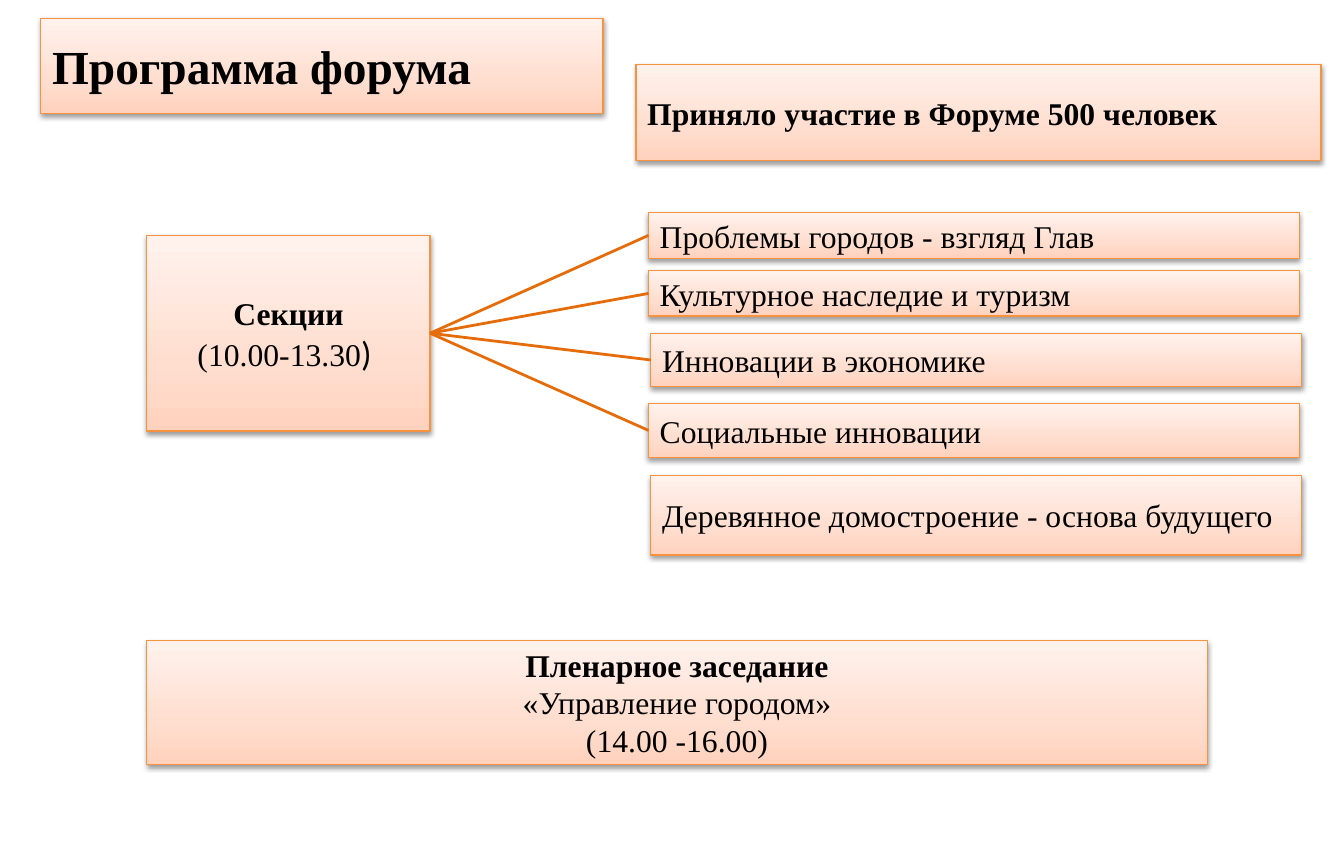
"""Build the forum programme slide."""
import copy

import pptx
import pptx.dml.color
import pptx.enum.shapes
import pptx.enum.text
import pptx.oxml
import pptx.oxml.ns
import pptx.util
from pptx.util import Inches

COLORS = {
    "bottom": "FFD2BD",
    "middle": "FFDED0",
    "top": "FFF2ED",
    "border": "F69240",
    "connector": "E46C0A",
    "text": "000000",
}
GRADIENT = [(0, "bottom"), (0.35, "middle"), (1, "top")]
SHADOW = (
    f'<a:outerShdw {pptx.oxml.ns.nsdecls("a")} blurRad="40000" dist="20000" '
    'dir="5400000" rotWithShape="0"><a:srgbClr val="000000">'
    '<a:alpha val="38000"/></a:srgbClr></a:outerShdw>'
)
LEFT = pptx.enum.text.PP_ALIGN.LEFT
CENTER = pptx.enum.text.PP_ALIGN.CENTER
SECTIONS = [
    ("Проблемы городов - взгляд Глав", 5.7, 1.87, 0.4),
    ("Культурное наследие и туризм", 5.7, 2.38, 0.4),
    ("Инновации в экономике", 5.72, 2.93, 0.47),
    ("Социальные инновации", 5.7, 3.55, 0.47),
    ("Деревянное домостроение - основа будущего", 5.72, 4.18, 0.7),
]


def rgb(name):
    """Return the named colour."""
    return pptx.dml.color.RGBColor.from_string(COLORS[name])


def add_run(paragraph, text, size=20, bold=False, font="Times New Roman"):
    """Append formatted text to a paragraph."""
    run = paragraph.add_run()
    run.text = text
    run.font.size = pptx.util.Pt(size)
    run.font.bold = bold
    run.font.name = font
    run.font.color.rgb = rgb("text")


def fill_gradient(shape):
    """Give a shape the three-stop vertical gradient."""
    shape.fill.gradient()
    shape.fill.gradient_angle = 90
    stops = shape.element.spPr.find(".//" + pptx.oxml.ns.qn("a:gsLst"))
    stops.append(copy.deepcopy(stops[0]))
    for stop, (position, color) in zip(shape.fill.gradient_stops, GRADIENT):
        stop.position = position
        stop.color.rgb = rgb(color)


def add_box(slide, left, top, width, height, lines, align=LEFT):
    """Add a shaded box; each line is a list of (text, format) runs."""
    shape = slide.shapes.add_shape(
        pptx.enum.shapes.MSO_SHAPE.RECTANGLE,
        Inches(left), Inches(top), Inches(width), Inches(height))
    fill_gradient(shape)
    shape.line.color.rgb = rgb("border")
    shape.line.width = pptx.util.Pt(0.75)
    shape.shadow.inherit = False
    effects = shape.element.spPr.find(pptx.oxml.ns.qn("a:effectLst"))
    effects.append(pptx.oxml.parse_xml(SHADOW))
    frame = shape.text_frame
    frame.word_wrap = True
    frame.vertical_anchor = pptx.enum.text.MSO_ANCHOR.MIDDLE
    for index, runs in enumerate(lines):
        paragraph = frame.add_paragraph() if index else frame.paragraphs[0]
        paragraph.alignment = align
        for text, text_format in runs:
            add_run(paragraph, text, **text_format)
    return shape


def add_link(slide, source, target):
    """Join the right side of one box to the left side of another."""
    connector = slide.shapes.add_connector(
        pptx.enum.shapes.MSO_CONNECTOR.STRAIGHT, 0, 0, 0, 0)
    connector.begin_connect(source, 3)
    connector.end_connect(target, 1)
    connector.line.color.rgb = rgb("connector")
    connector.line.width = pptx.util.Pt(1.75)
    connector.element.spPr.append(pptx.oxml.parse_xml(
        f'<a:effectLst {pptx.oxml.ns.nsdecls("a")}/>'))


def main():
    """Build and save the slide."""
    presentation = pptx.Presentation()
    presentation.slide_width = Inches(189 / 16)
    presentation.slide_height = Inches(7.5)
    slide = presentation.slides.add_slide(presentation.slide_layouts[6])
    bold = {"bold": True}

    add_box(slide, 0.36, 0.16, 4.94, 0.84,
            [[("Программа форума", {"size": 30, "bold": True})]])
    add_box(slide, 5.59, 0.57, 6.02, 0.84,
            [[("Приняло участие в Форуме 500 человек", bold)]])
    hub = add_box(slide, 1.29, 2.07, 2.49, 1.72, [
        [("Секции", bold)],
        [("(10.00-13.30", {}), (") ", {"size": 22, "font": "Calibri"})],
    ], align=CENTER)
    topics = [add_box(slide, left, top, 5.72, height, [[(text, {})]])
              for text, left, top, height in SECTIONS]
    for topic in topics[:4]:
        add_link(slide, hub, topic)
    add_box(slide, 1.29, 5.63, 9.32, 1.09, [
        [("Пленарное заседание", bold)],
        [("«Управление городом»", {})],
        [("(14.00 -16.00)", {})],
    ], align=CENTER)
    presentation.save("out.pptx")


if __name__ == "__main__":
    main()
